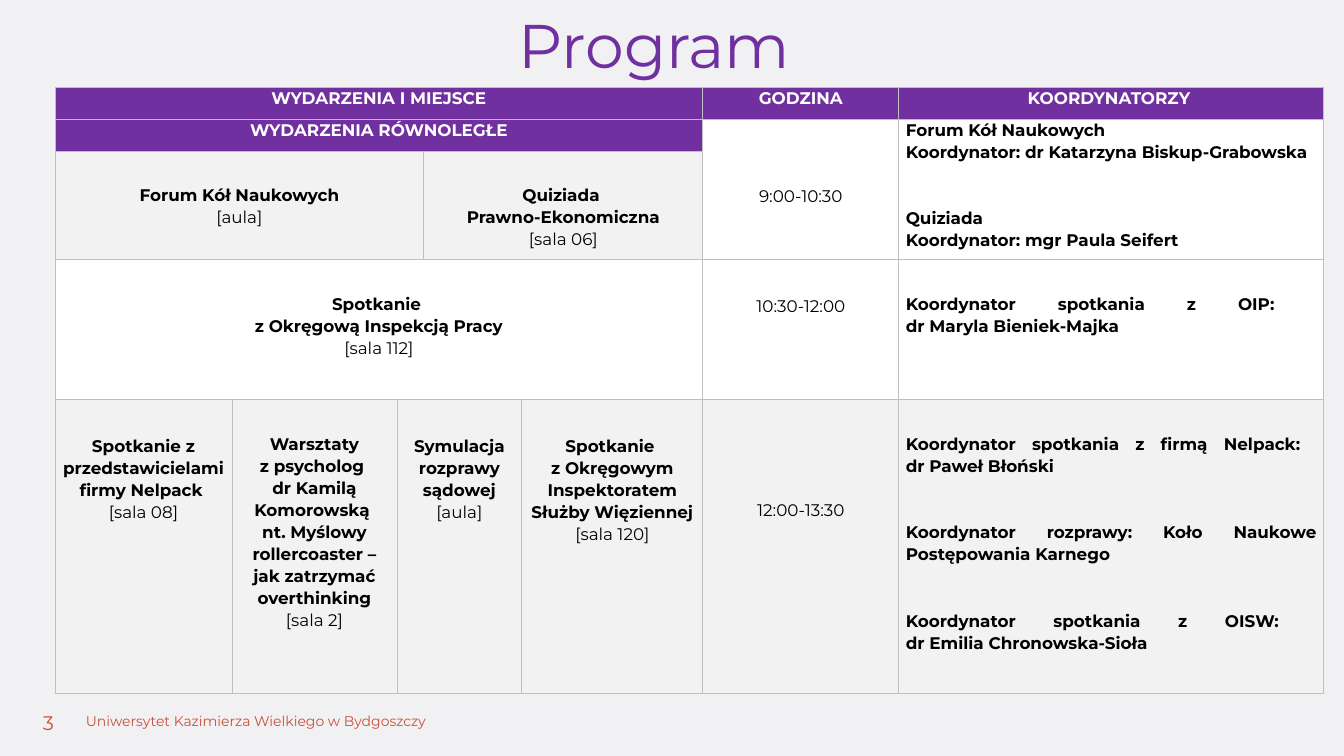
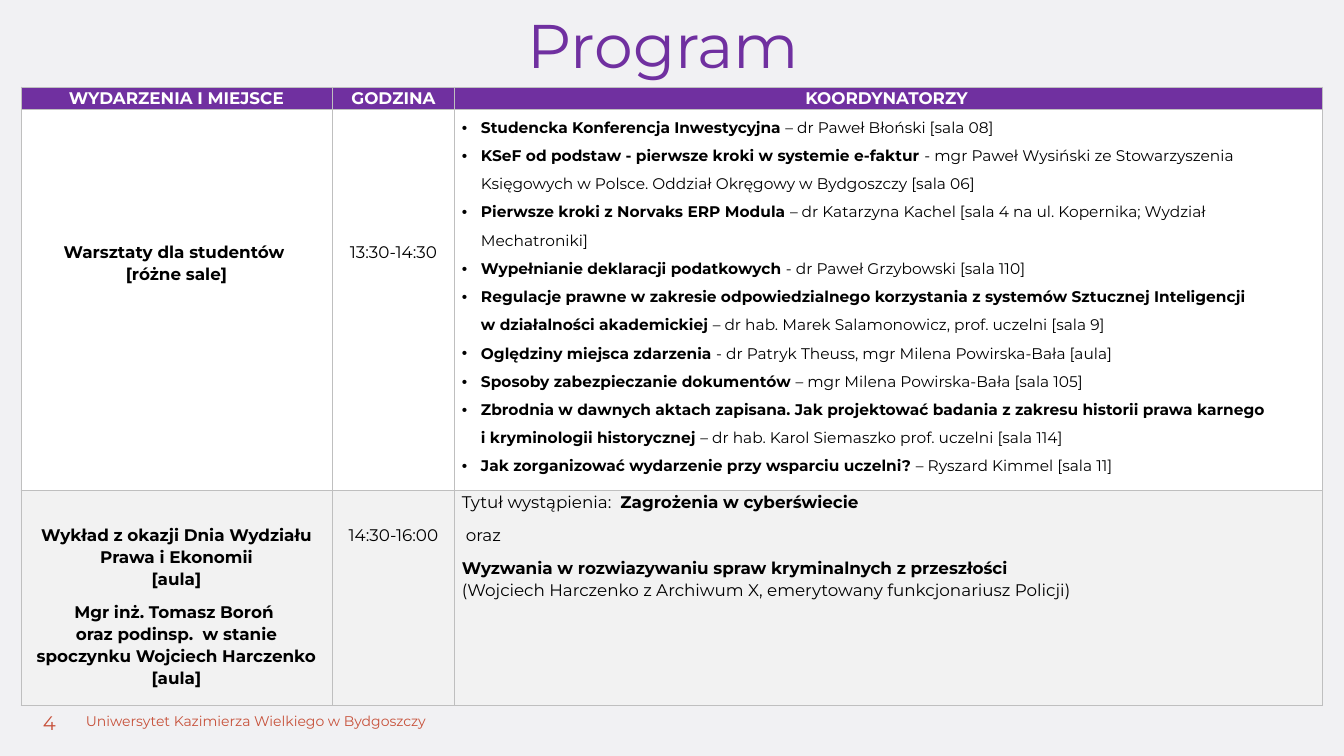
from copy import deepcopy
from dataclasses import dataclass

from lxml.etree import SubElement
from pptx import Presentation
from pptx.dml.color import RGBColor
from pptx.enum.text import PP_ALIGN
from pptx.oxml import parse_xml
from pptx.oxml.ns import nsdecls, qn
from pptx.util import Emu, Pt

# Shared look
EMU_PER_PX = 12192000 / 1344
FONT = "Montserrat"
COLORS = {
    "background": "F1F1F3",
    "purple": "7030A0",
    "footer": "C7513A",
    "white": "FFFFFF",
    "gray": "F2F2F2",
    "black": "000000",
    "border": "BFBFBF",
}
LEFT, CENTER, JUSTIFY = PP_ALIGN.LEFT, PP_ALIGN.CENTER, PP_ALIGN.JUSTIFY
TABLE_TOP = 87
LINE = 33  # one text line with its spacing
PARA_GAP, WIDE_GAP = 8, 31.65  # points after a paragraph
FOOTER = "Uniwersytet Kazimierza Wielkiego w Bydgoszczy"


@dataclass
class Span:
    text: str
    bold: bool = False
    size: int = 12
    color: str = "black"


@dataclass
class Para:
    spans: list[Span]
    align: PP_ALIGN = CENTER
    spacing: float = 1.07
    after: float = PARA_GAP
    left: int = 0
    bullet: bool = False


@dataclass
class Cell:
    row: int
    col: int
    paras: list[Para]
    fill: str = "white"
    top: int = 0
    rows: int = 1
    cols: int = 1


@dataclass
class Program:
    number: int
    title_left: int
    left: int
    columns: list[int]
    rows: list[int]
    cells: list[Cell]


def px(length: int) -> Emu:
    return Emu(round(length * EMU_PER_PX))


def rgb(name: str) -> RGBColor:
    return RGBColor.from_string(COLORS[name])


# Text builders
def event(name: str, place: str = "", **options) -> Para:
    spans = [Span(name, bold=True)]
    if place:
        spans.append(Span(place))
    return Para(spans, **options)


def plain(text: str, **options) -> Para:
    return Para([Span(text)], **options)


def workshop(name: str, host: str) -> Para:
    return Para([Span(name, True, 11), Span(host, False, 11)],
                LEFT, 1.5, 0, 19, True)


def header(row: int, col: int, text: str, cols: int = 1) -> Cell:
    return Cell(row, col, [Para([Span(text, True, color="white")])], "purple", cols=cols)


# Drawing
def add_span(para, span: Span) -> None:
    for index, text in enumerate(span.text.split("\n")):
        if index:
            para.add_line_break()
            line_break = para._p[-1]
        run = para.add_run()
        run.text = text
        values = {"name": FONT, "size": Pt(span.size), "bold": span.bold}
        for name, value in values.items():
            setattr(run.font, name, value)
        run.font.color.rgb = rgb(span.color)
        if index:
            line_break.append(deepcopy(run._r.rPr))
        if not text:
            para._p.remove(run._r)


def fill_text(frame, paras: list[Para]) -> None:
    for index, item in enumerate(paras):
        para = frame.add_paragraph() if index else frame.paragraphs[0]
        last = index == len(paras) - 1
        values = {"alignment": item.align, "line_spacing": item.spacing,
                  "space_after": Pt(0 if last else item.after)}
        for name, value in values.items():
            setattr(para, name, value)
        if item.left:
            properties = para._p.get_or_add_pPr()
            properties.set("marL", str(px(item.left)))
            if item.bullet:
                properties.set("indent", str(-px(item.left)))
                SubElement(properties, qn("a:buFont"), typeface="Arial")
                SubElement(properties, qn("a:buChar"), char="•")
        for span in item.spans:
            add_span(para, span)


def add_text(page, left: int, top: int, width: int, height: int, para: Para) -> None:
    box = page.shapes.add_textbox(*map(px, (left, top, width, height)))
    box.text_frame.word_wrap = True
    fill_text(box.text_frame, [para])


def style_cell(cell, fill: str, top: int) -> None:
    values = {"margin_left": px(7), "margin_right": px(7),
              "margin_top": px(top), "margin_bottom": px(0)}
    for name, value in values.items():
        setattr(cell, name, value)
    cell.fill.solid()
    cell.fill.fore_color.rgb = rgb(fill)
    properties = cell._tc.get_or_add_tcPr()
    for index, side in enumerate("LRTB"):
        properties.insert(index, parse_xml(
            f'<a:ln{side} {nsdecls("a")} w="9525"><a:solidFill>'
            f'<a:srgbClr val="{COLORS["border"]}"/></a:solidFill></a:ln{side}>'))


def add_program_table(page, program: Program) -> None:
    columns, rows = program.columns, program.rows
    table = page.shapes.add_table(
        len(rows), len(columns), px(program.left), px(TABLE_TOP),
        px(sum(columns)), px(sum(rows))).table
    table.first_row = table.horz_banding = False
    for column, width in zip(table.columns, columns):
        column.width = px(width)
    for row, height in zip(table.rows, rows):
        row.height = px(height)
    for item in program.cells:
        row_end, col_end = item.row + item.rows, item.col + item.cols
        for row in range(item.row, row_end):
            for col in range(item.col, col_end):
                style_cell(table.cell(row, col), item.fill, item.top)
        cell = table.cell(item.row, item.col)
        if item.rows * item.cols > 1:
            cell.merge(table.cell(row_end - 1, col_end - 1))
        fill_text(cell.text_frame, item.paras)


def add_page(deck, program: Program) -> None:
    page = deck.slides.add_slide(deck.slide_layouts[6])
    add_text(page, 76, 703, 403, 27,
             Para([Span(FOOTER, size=10, color="footer")], LEFT, 1.3))
    add_text(page, 33, 699, 45, 34,
             Para([Span(str(program.number), size=14, color="footer")], LEFT, 1.3))
    add_program_table(page, program)
    add_text(page, program.title_left, 2, 531, 85,
             Para([Span("Program", size=44, color="purple")], spacing=1.0))


# Content
MORNING = Program(
    3, 389, 55, [177, 165, 27, 98, 181, 196, 425], [32, 32, 109, 140, 294], [
        header(0, 0, "WYDARZENIA I MIEJSCE", 5),
        header(0, 5, "GODZINA"),
        header(0, 6, "KOORDYNATORZY "),
        header(1, 0, "WYDARZENIA RÓWNOLEGŁE", 5),
        Cell(1, 5, [plain("9:00-10:30")], top=2 * LINE, rows=2),
        Cell(1, 6, [
            event("Forum Kół Naukowych\nKoordynator: dr Katarzyna Biskup-Grabowska",
                  align=LEFT, after=WIDE_GAP),
            event("Quiziada\nKoordynator: mgr Paula Seifert", align=LEFT)], rows=2),
        Cell(2, 0, [event("Forum Kół Naukowych\n", "[aula]")], "gray", LINE, cols=3),
        Cell(2, 3, [event("Quiziada \nPrawno-Ekonomiczna\n", "[sala 06]")],
             "gray", LINE, cols=2),
        Cell(3, 0, [event("Spotkanie \nz Okręgową Inspekcją Pracy\n", "[sala 112]")],
             top=LINE, cols=5),
        Cell(3, 5, [plain("10:30-12:00")], top=LINE + 2),
        Cell(3, 6, [event("Koordynator spotkania z OIP: \ndr Maryla Bieniek-Majka",
                          align=JUSTIFY)], top=LINE),
        Cell(4, 0, [event("Spotkanie z przedstawicielami firmy Nelpack \n", "[sala 08]")],
             "gray", LINE + 2),
        Cell(4, 1, [event("Warsztaty\nz psycholog \ndr Kamilą Komorowską \nnt. Myślowy "
                          "rollercoaster – jak zatrzymać overthinking\n", "[sala 2]")],
             "gray", LINE),
        Cell(4, 2, [event("Symulacja rozprawy sądowej\n", "[aula]")],
             "gray", LINE + 2, cols=2),
        Cell(4, 4, [event("Spotkanie \nz Okręgowym Inspektoratem Służby Więziennej\n",
                          "[sala 120]")], "gray", LINE + 2),
        Cell(4, 5, [plain("12:00-13:30")], "gray", 3 * LINE),
        Cell(4, 6, [event(text, align=JUSTIFY, after=WIDE_GAP) for text in (
            "Koordynator spotkania z firmą Nelpack: \ndr Paweł Błoński",
            "Koordynator rozprawy: Koło Naukowe Postępowania Karnego",
            "Koordynator spotkania z OISW: \ndr Emilia Chronowska-Sioła")], "gray", LINE),
    ])

WORKSHOPS = [
    workshop("Studencka Konferencja Inwestycyjna ", "– dr Paweł Błoński [sala 08]"),
    workshop("KSeF od podstaw - pierwsze kroki w systemie e-faktur ",
             "- mgr Paweł Wysiński ze Stowarzyszenia Księgowych w Polsce. "
             "Oddział Okręgowy w Bydgoszczy [sala 06]"),
    workshop("Pierwsze kroki z Norvaks ERP Modula ",
             "– dr Katarzyna Kachel [sala 4 na ul. Kopernika; Wydział Mechatroniki]"),
    workshop("Wypełnianie deklaracji podatkowych ", "- dr Paweł Grzybowski [sala 110]"),
    workshop("Regulacje prawne w zakresie odpowiedzialnego korzystania z systemów "
             "Sztucznej Inteligencji \nw działalności akademickiej ",
             "– dr hab. Marek Salamonowicz, prof. uczelni [sala 9]"),
    workshop("Oględziny miejsca zdarzenia ",
             "- dr Patryk Theuss, mgr Milena Powirska-Bała [aula]"),
    workshop("Sposoby zabezpieczanie dokumentów ", "– mgr Milena Powirska-Bała [sala 105]"),
    workshop("Zbrodnia w dawnych aktach zapisana. Jak projektować badania z zakresu "
             "historii prawa karnego \ni kryminologii historycznej ",
             "– dr hab. Karol Siemaszko prof. uczelni [sala 114]"),
    workshop("Jak zorganizować wydarzenie przy wsparciu uczelni? ",
             "– Ryszard Kimmel [sala 11]"),
]

AFTERNOON = Program(
    4, 398, 21, [311, 123, 868], [22, 382, 215], [
        header(0, 0, "WYDARZENIA I MIEJSCE"),
        header(0, 1, "GODZINA"),
        header(0, 2, "KOORDYNATORZY "),
        Cell(1, 0, [event("Warsztaty dla studentów \n[różne sale]")], top=4 * LINE),
        Cell(1, 1, [plain("13:30-14:30")], top=4 * LINE),
        Cell(1, 2, WORKSHOPS),
        Cell(2, 0, [
            event("Wykład z okazji Dnia Wydziału Prawa i Ekonomii\n[aula]"),
            event("Mgr inż. Tomasz Boroń \noraz podinsp.  w stanie spoczynku "
                  "Wojciech Harczenko\n[aula]")], "gray", LINE),
        Cell(2, 1, [plain("14:30-16:00")], "gray", LINE),
        Cell(2, 2, [
            Para([Span("Tytuł wystąpienia:  "), Span("Zagrożenia w cyberświecie", True)],
                 JUSTIFY),
            plain("oraz", align=JUSTIFY, left=4),
            event("Wyzwania w rozwiazywaniu spraw kryminalnych z przeszłości\n",
                  "(Wojciech Harczenko z Archiwum X, emerytowany funkcjonariusz Policji)",
                  align=LEFT)], "gray"),
    ])


def main() -> None:
    deck = Presentation()
    deck.slide_width, deck.slide_height = px(1344), px(756)
    background = deck.slide_master.background.fill
    background.solid()
    background.fore_color.rgb = rgb("background")
    for program in (MORNING, AFTERNOON):
        add_page(deck, program)
    deck.save("out.pptx")


if __name__ == "__main__":
    main()
